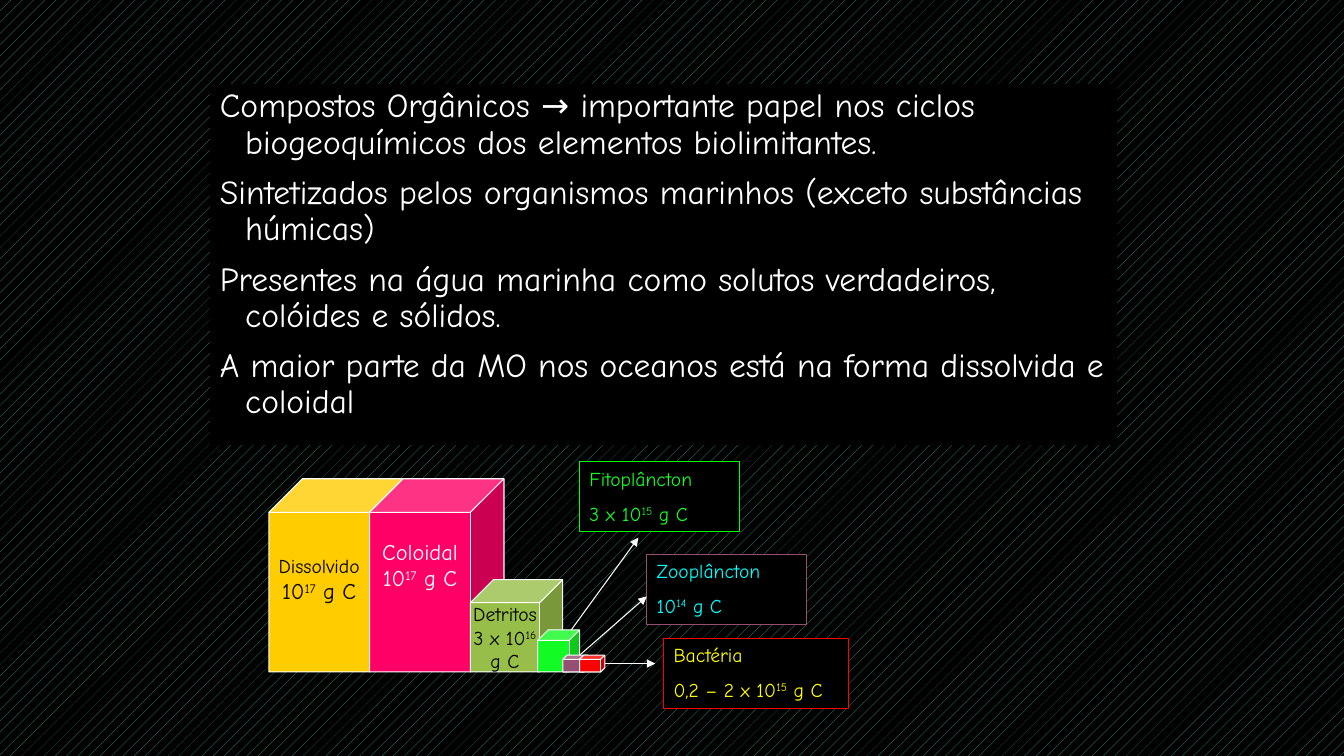
import pptx
import pptx.dml.color
import pptx.enum.dml
import pptx.enum.shapes
import pptx.enum.text
import pptx.oxml.ns
import pptx.util
from lxml import etree

Pt = pptx.util.Pt
SHAPES = pptx.enum.shapes.MSO_SHAPE
ALIGN = pptx.enum.text.PP_ALIGN
ANCHOR = pptx.enum.text.MSO_ANCHOR

FONT = "Comic Neue"
WHITE, BLACK = "FFFFFF", "000000"
GREEN, PLUM, RED = "13FB24", "954F72", "FF0000"
CUBE_BASE = 480
LABEL_HEIGHT = 50

BODY = [
    "Compostos Orgânicos → importante papel nos ciclos biogeoquímicos dos elementos biolimitantes.",
    "Sintetizados pelos organismos marinhos (exceto substâncias húmicas)",
    "Presentes na água marinha como solutos verdadeiros, colóides e sólidos.",
    "A maior parte da MO nos oceanos está na forma dissolvida e coloidal",
]
# left, width, height, fill, text colour, (text, size) lines, bottom inset
CUBES = [
    (192, 96, 138, "FFCC00", BLACK, [("Dissolvido", 14), ("10^17^ g C", 16)], 22),
    (264, 96, 138, "FF0066", WHITE, [("Coloidal", 16), ("10^17^ g C", 16)], 43),
    (336, 66, 66, "97BE49", BLACK,
     [("Detritos", 14), ("3 x 10^16^", 14), ("g C", 14)], 3.6),
    (384, 30, 30, GREEN, WHITE, [], 3.6),
    (402, 18, 12, PLUM, WHITE, [], 3.6),
    (414, 18, 12, RED, WHITE, [], 3.6),
]
# left, top, width, border, text colour, lines
LABELS = [
    (414, 330, 114, "00FF00", GREEN, ["Fitoplâncton", "3 x 10^15^ g C"]),
    (462, 396, 114, PLUM, "00FFFF", ["Zooplâncton", "10^14^ g C"]),
    (474, 456, 132, RED, "FFFF00", ["Bactéria", "0,2 – 2 x 10^15^ g C"]),
]
ARROWS = [(408, 450, 456, 384), (414, 468, 462, 426), (432, 474, 468, 474)]


def rgb(color):
    return pptx.dml.color.RGBColor.from_string(color)


def set_background(slide):
    fill = slide.background.fill
    fill.patterned()
    fill.pattern = pptx.enum.dml.MSO_PATTERN.PERCENT_10
    fill.fore_color.rgb = rgb("29AF8C")
    fill.back_color.rgb = rgb(BLACK)


def add_box(slide, kind, left, top, width, height, fill, border=None):
    sp = slide.shapes.add_shape(kind, Pt(left), Pt(top), Pt(width), Pt(height))
    sp.shadow.inherit = False
    sp.fill.solid()
    sp.fill.fore_color.rgb = rgb(fill)
    if border:
        sp.line.color.rgb = rgb(border)
        sp.line.width = Pt(0.75)
    else:
        sp.line.fill.background()
    return sp


def write_lines(tf, lines, color, align=ALIGN.LEFT, space=0):
    """Write (text, size) lines; text between ^ marks is superscript."""
    for i, (text, size) in enumerate(lines):
        p = tf.add_paragraph() if i else tf.paragraphs[0]
        p.alignment = align
        p.space_before = Pt(space)
        for j, part in enumerate(text.split("^")):
            if not part:
                continue
            r = p.add_run()
            r.text = part
            r.font.name = FONT
            r.font.size = Pt(size)
            r.font.color.rgb = rgb(color)
            if j % 2:
                r.font._element.set("baseline", "30000")


def add_body(slide):
    sp = add_box(slide, SHAPES.RECTANGLE, 150, 60, 648, 258, BLACK)
    tf = sp.text_frame
    tf.word_wrap = True
    tf.vertical_anchor = ANCHOR.TOP
    write_lines(tf, [(text, 24) for text in BODY], WHITE, space=10)
    for p in tf.paragraphs:
        p.line_spacing = 0.9
        pPr = p._p.get_or_add_pPr()
        pPr.set("marL", str(Pt(18)))
        pPr.set("indent", str(-Pt(18)))


def add_cube(slide, left, width, height, fill, color, lines, bottom_inset):
    sp = add_box(slide, SHAPES.CUBE, left, CUBE_BASE - height, width, height, fill, WHITE)
    sp.adjustments[0] = 0.25
    tf = sp.text_frame
    tf.word_wrap = False
    tf.vertical_anchor = ANCHOR.MIDDLE
    tf.margin_bottom = Pt(bottom_inset)
    write_lines(tf, lines, color, ALIGN.CENTER)


def add_label(slide, left, top, width, border, color, lines):
    sp = add_box(slide, SHAPES.RECTANGLE, left, top, width, LABEL_HEIGHT, BLACK, border)
    tf = sp.text_frame
    tf.word_wrap = True
    tf.vertical_anchor = ANCHOR.TOP
    write_lines(tf, [(text, 14) for text in lines], color, space=8)


def add_arrow(slide, x1, y1, x2, y2):
    line = slide.shapes.add_connector(
        pptx.enum.shapes.MSO_CONNECTOR.STRAIGHT, Pt(x1), Pt(y1), Pt(x2), Pt(y2))
    line.line.color.rgb = rgb(WHITE)
    line.line.width = Pt(0.75)
    qn = pptx.oxml.ns.qn
    etree.SubElement(line.line._get_or_add_ln(), qn("a:tailEnd"), type="triangle")
    etree.SubElement(line._element.spPr, qn("a:effectLst"))


def main():
    prs = pptx.Presentation()
    prs.slide_width, prs.slide_height = Pt(960), Pt(540)
    slide = prs.slides.add_slide(prs.slide_layouts[6])
    set_background(slide)
    add_body(slide)
    for cube in CUBES:
        add_cube(slide, *cube)
    for label in LABELS:
        add_label(slide, *label)
    for arrow in ARROWS:
        add_arrow(slide, *arrow)
    prs.save("out.pptx")


if __name__ == "__main__":
    main()
